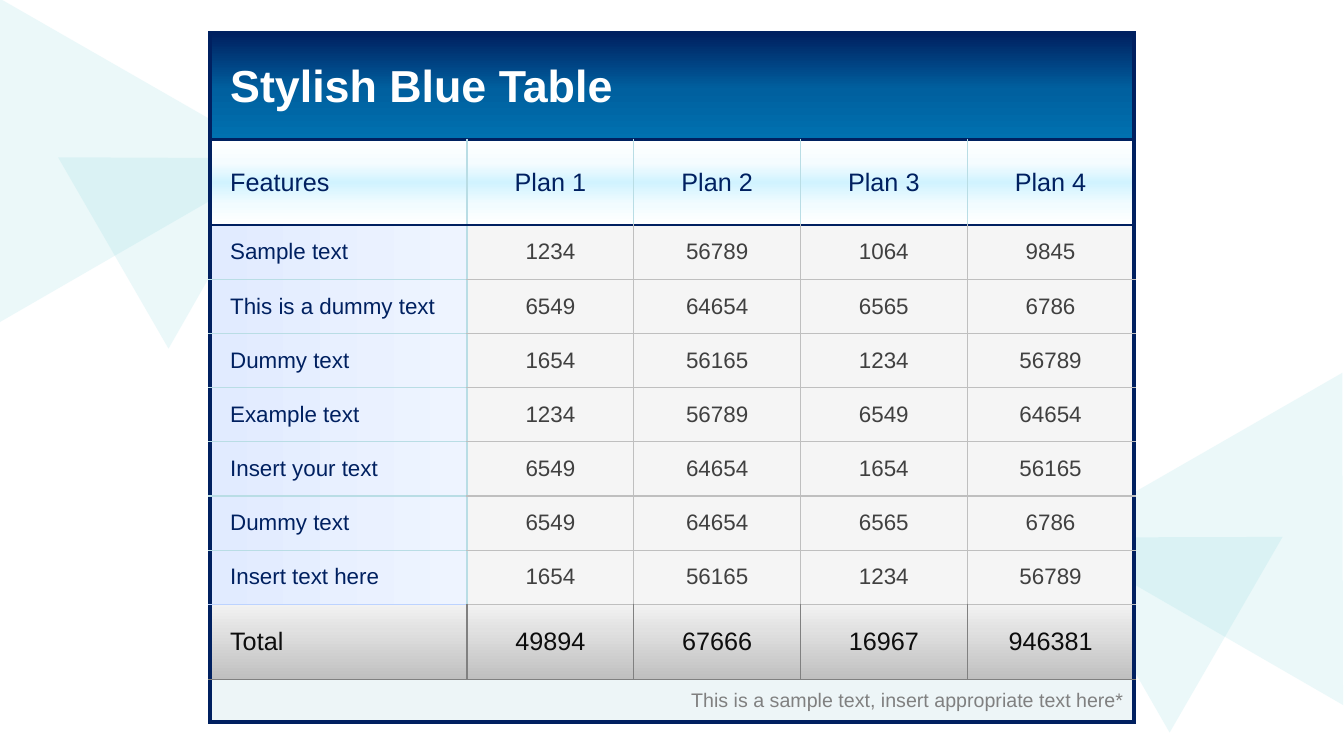
from lxml import etree
from pptx import Presentation
from pptx import util as u
from pptx.dml.color import RGBColor
from pptx.enum import shapes, text
from pptx.oxml import ns

PX = 3810  # 240 px to the inch
FONT = "Arial"
NAVY, ICE, SILVER, GREY, PERIWINKLE = "002060", "B9DDE5", "BFBFBF", "808080", "BDD3FF"
NO_STYLE = "{2D5ABB26-0587-4C30-8999-92F81FD0307C}"
LEFT, CENTER, RIGHT = text.PP_ALIGN.LEFT, text.PP_ALIGN.CENTER, text.PP_ALIGN.RIGHT

# Gradients: angle, then stops of (percent, colour)
TITLE_FILL = (90, [(0, NAVY), (53, "00609F"), (100, "0071B0")])
HEADER_FILL = (90, [(0, "FFFFFF"), (27, "F5FCFF"), (50, "D1F3FF"),
                    (76, "F2FCFF"), (100, "FFFFFF")])
LABEL_FILL = (0, [(0, "E1EBFF"), (100, "EEF4FF")])
TOTAL_FILL = (270, [(0, SILVER), (100, "F2F2F2")])

# Borders: colour, width in points
FRAME, RULE = (NAVY, 3), (NAVY, 2.25)

COLUMNS = [612] + [397] * 4
HEIGHTS = [254, 203] + [129] * 7 + [180, 100]
ROWS = [
    ["Stylish Blue Table"],
    ["Features", "Plan 1", "Plan 2", "Plan 3", "Plan 4"],
    ["Sample text", "1234", "56789", "1064", "9845"],
    ["This is a dummy text", "6549", "64654", "6565", "6786"],
    ["Dummy text", "1654", "56165", "1234", "56789"],
    ["Example text", "1234", "56789", "6549", "64654"],
    ["Insert your text", "6549", "64654", "1654", "56165"],
    ["Dummy text", "6549", "64654", "6565", "6786"],
    ["Insert text here", "1654", "56165", "1234", "56789"],
    ["Total", "49894", "67666", "16967", "946381"],
    ["This is a sample text, insert appropriate text here*"],
]
TITLE, HEADER, TOTAL, FOOTER = 0, 1, len(ROWS) - 2, len(ROWS) - 1

# Left, top, width, height, rotation
TRIANGLES = [
    (-221, -48, 775, 667, 330),
    (202, 264, 526, 451, 60),
    (2628, 842, 794, 684, 30),
    (2450, 1164, 538, 463, 300),
]


def px(length):
    return u.Emu(length * PX)


def colour(code):
    return RGBColor.from_string(code)


def add_node(parent, tag, **attributes):
    node = etree.SubElement(parent, ns.qn(tag))
    for name, value in attributes.items():
        node.set(name, str(value))
    return node


def add_triangle(page, left, top, width, height, rotation):
    triangle = page.shapes.add_shape(shapes.MSO_SHAPE.ISOSCELES_TRIANGLE,
                                     px(left), px(top), px(width), px(height))
    triangle.rotation = rotation
    triangle.shadow.inherit = False
    triangle.line.fill.background()
    triangle.fill.solid()
    triangle.fill.fore_color.rgb = colour("85D8DE")
    tint = triangle.fill._xPr.find(".//" + ns.qn("a:srgbClr"))
    add_node(tint, "a:alpha", val=16000)


def set_borders(cell, left, right, top, bottom):
    props = cell._tc.get_or_add_tcPr()
    for side, (code, width) in zip("LRTB", (left, right, top, bottom)):
        line = add_node(props, "a:ln" + side, w=u.Pt(width))
        add_node(add_node(line, "a:solidFill"), "a:srgbClr", val=colour(code))


def set_fill(cell, fill):
    if isinstance(fill, str):
        cell.fill.solid()
        cell.fill.fore_color.rgb = colour(fill)
        return
    angle, stops = fill
    gradient = add_node(cell._tc.get_or_add_tcPr(), "a:gradFill", rotWithShape=1)
    stop_list = add_node(gradient, "a:gsLst")
    for percent, code in stops:
        stop = add_node(stop_list, "a:gs", pos=percent * 1000)
        add_node(stop, "a:srgbClr", val=colour(code))
    add_node(gradient, "a:lin", ang=angle * 60000, scaled=0)


def set_text(cell, words, size, code, bold, align):
    cell.vertical_anchor = text.MSO_ANCHOR.MIDDLE
    if align == LEFT:
        cell.margin_left = px(48)
    para = cell.text_frame.paragraphs[0]
    para.alignment = align
    span = para.add_run()
    span.text = words
    span.font.name = FONT
    span.font.size = u.Pt(size)
    span.font.bold = bold
    span.font.color.rgb = colour(code)


def horizontal_line(edge, column):
    """Border above the row numbered edge."""
    if edge in (TITLE, FOOTER + 1):
        return FRAME
    if edge in (HEADER, HEADER + 1):
        return RULE
    if edge == FOOTER:
        return GREY, 1
    if column > 0:
        return SILVER, 1
    return (PERIWINKLE if edge == TOTAL else ICE), 1


def vertical_line(row, edge):
    """Border left of the column numbered edge."""
    if edge in (0, len(COLUMNS)):
        return FRAME
    if row == TOTAL:
        return GREY, 1
    return (ICE if row == HEADER or edge == 1 else SILVER), 1


def cell_look(row, column):
    """Fill, text size, text colour, bold and alignment."""
    align = CENTER if column else LEFT
    if row == TITLE:
        return TITLE_FILL, 32, "FFFFFF", True, LEFT
    if row == HEADER:
        return HEADER_FILL, 18, NAVY, False, align
    if row == TOTAL:
        return TOTAL_FILL, 18, "0D0D0D", False, align
    if row == FOOTER:
        return "EDF5F7", 14, GREY, False, RIGHT
    if column == 0:
        return LABEL_FILL, 16, NAVY, False, align
    return "F5F5F5", 16, "404040", False, align


def add_plan_table(page):
    frame = page.shapes.add_table(len(ROWS), len(COLUMNS), px(500), px(79),
                                  px(sum(COLUMNS)), px(sum(HEIGHTS)))
    table = frame.table
    table.first_row = table.horz_banding = False
    table._tbl.tblPr.find(ns.qn("a:tableStyleId")).text = NO_STYLE
    for column, width in zip(table.columns, COLUMNS):
        column.width = px(width)
    for row, height in zip(table.rows, HEIGHTS):
        row.height = px(height)

    for row in (TITLE, FOOTER):
        table.cell(row, 0).merge(table.cell(row, len(COLUMNS) - 1))

    for row, entries in enumerate(ROWS):
        for column, words in enumerate(entries):
            cell = table.cell(row, column)
            fill, *text_look = cell_look(row, column)
            set_text(cell, words, *text_look)
            set_borders(cell,
                        vertical_line(row, column),
                        vertical_line(row, column + cell.span_width),
                        horizontal_line(row, column),
                        horizontal_line(row + 1, column))
            set_fill(cell, fill)


def main():
    deck = Presentation()
    deck.slide_width, deck.slide_height = px(3200), px(1800)
    page = deck.slides.add_slide(deck.slide_layouts[6])

    # Background triangles
    for triangle in TRIANGLES:
        add_triangle(page, *triangle)

    # Plan table
    add_plan_table(page)
    deck.save("out.pptx")


if __name__ == "__main__":
    main()
